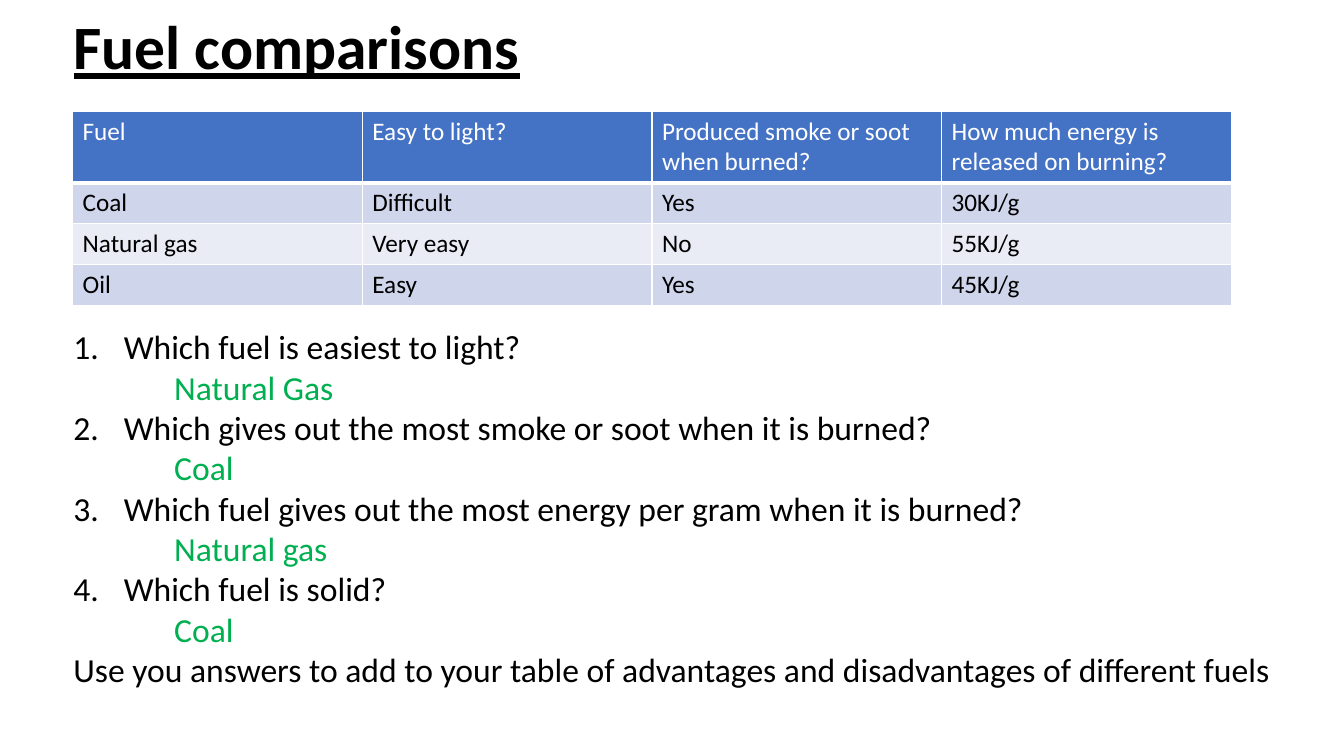
from lxml import etree
from pptx import Presentation
from pptx.dml.color import RGBColor
from pptx.enum.text import MSO_ANCHOR, MSO_AUTO_SIZE, PP_ALIGN
from pptx.oxml.ns import qn
from pptx.util import Cm, Pt

LEFT = PP_ALIGN.LEFT
MIDDLE = MSO_ANCHOR.MIDDLE
GROW = MSO_AUTO_SIZE.SHAPE_TO_FIT_TEXT

HUES = {
    "ink": "000000",
    "white": "FFFFFF",
    "head": "4472C4",
    "odd": "CFD5EA",
    "even": "E9EBF5",
    "green": "00B050",
}

FUELS = [
    ["Fuel", "Easy to light?", "Produced smoke or soot when burned?",
     "How much energy is released on burning?"],
    ["Coal", "Difficult", "Yes", "30KJ/g"],
    ["Natural gas", "Very easy", "No", "55KJ/g"],
    ["Oil", "Easy", "Yes", "45KJ/g"],
]

QUIZ = [
    ("Which fuel is easiest to light?", "Natural Gas"),
    ("Which gives out the most smoke or soot when it is burned?", "Coal"),
    ("Which fuel gives out the most energy per gram when it is burned?",
     "Natural gas"),
    ("Which fuel is solid?", "Coal"),
]
TASK = ("Use you answers to add to your table of advantages and "
        "disadvantages of different fuels")


class Page:
    """Holds the style and the current slide."""

    def __init__(self, deck, font="Calibri"):
        self.slide = deck.slides.add_slide(deck.slide_layouts[5])
        self.font = font

    def color(self, name):
        return RGBColor.from_string(HUES[name])

    def run(self, para, text, size, hue="ink", bold=False, line=False):
        run = para.add_run()
        run.text = text
        font = run.font
        font.name, font.size = self.font, Pt(size)
        font.bold, font.underline = bold, line
        font.color.rgb = self.color(hue)

    def title(self, text, left, top, width, height):
        box = self.slide.shapes.title
        box.left, box.top = Cm(left), Cm(top)
        box.width, box.height = Cm(width), Cm(height)
        box.text_frame.vertical_anchor = MIDDLE
        para = box.text_frame.paragraphs[0]
        para.alignment, para.line_spacing = LEFT, 0.9
        self.run(para, text, 44, bold=True, line=True)

    def edge(self, cell, head):
        props = cell._tc.get_or_add_tcPr()
        for spot, side in enumerate(["lnL", "lnR", "lnT", "lnB"]):
            width = Pt(3 if head and side == "lnB" else 1)
            line = etree.Element(qn("a:" + side), w=str(width))
            fill = etree.SubElement(line, qn("a:solidFill"))
            etree.SubElement(fill, qn("a:srgbClr"), val=HUES["white"])
            props.insert(spot, line)

    def table(self, rows, left, top, width, tall, low):
        high = tall + low * (len(rows) - 1)
        grid = self.slide.shapes.add_table(
            len(rows), len(rows[0]), Cm(left), Cm(top), Cm(width), Cm(high)
        ).table
        for r, row in enumerate(rows):
            head = r == 0
            grid.rows[r].height = Cm(tall if head else low)
            shade = "head" if head else "odd" if r % 2 else "even"
            for c, text in enumerate(row):
                cell = grid.cell(r, c)
                cell.fill.solid()
                cell.fill.fore_color.rgb = self.color(shade)
                self.edge(cell, head)
                self.run(cell.text_frame.paragraphs[0], text, 18,
                         "white" if head else "ink")

    def indent(self, para, left, first=0):
        props = para._p.get_or_add_pPr()
        props.set("marL", str(Cm(left)))
        props.set("indent", str(Cm(first)))
        return props

    def quiz(self, items, task, left, top, width, height):
        box = self.slide.shapes.add_textbox(
            Cm(left), Cm(top), Cm(width), Cm(height))
        frame = box.text_frame
        frame.word_wrap, frame.auto_size = True, GROW
        para = frame.paragraphs[0]
        for num, (ask, reply) in enumerate(items, 1):
            props = self.indent(para, 1.27, -1.27)
            etree.SubElement(props, qn("a:buFont"), typeface="+mj-lt")
            etree.SubElement(props, qn("a:buAutoNum"),
                             type="arabicPeriod", startAt=str(num))
            self.run(para, ask, 24)
            para = frame.add_paragraph()
            self.indent(para, 2.54)
            self.run(para, reply, 24, "green")
            para = frame.add_paragraph()
        self.run(para, task, 24)


def main():
    deck = Presentation()
    deck.slide_width, deck.slide_height = Cm(33.87), Cm(19.05)
    page = Page(deck)
    page.title("Fuel comparisons", 1.6, 0, 29.2, 2.5)
    page.table(FUELS, 1.83, 2.8, 29.2, 1.8, 1.03)
    page.quiz(QUIZ, TASK, 1.6, 8.1, 32.46, 9.5)
    deck.save("out.pptx")


if __name__ == "__main__":
    main()
